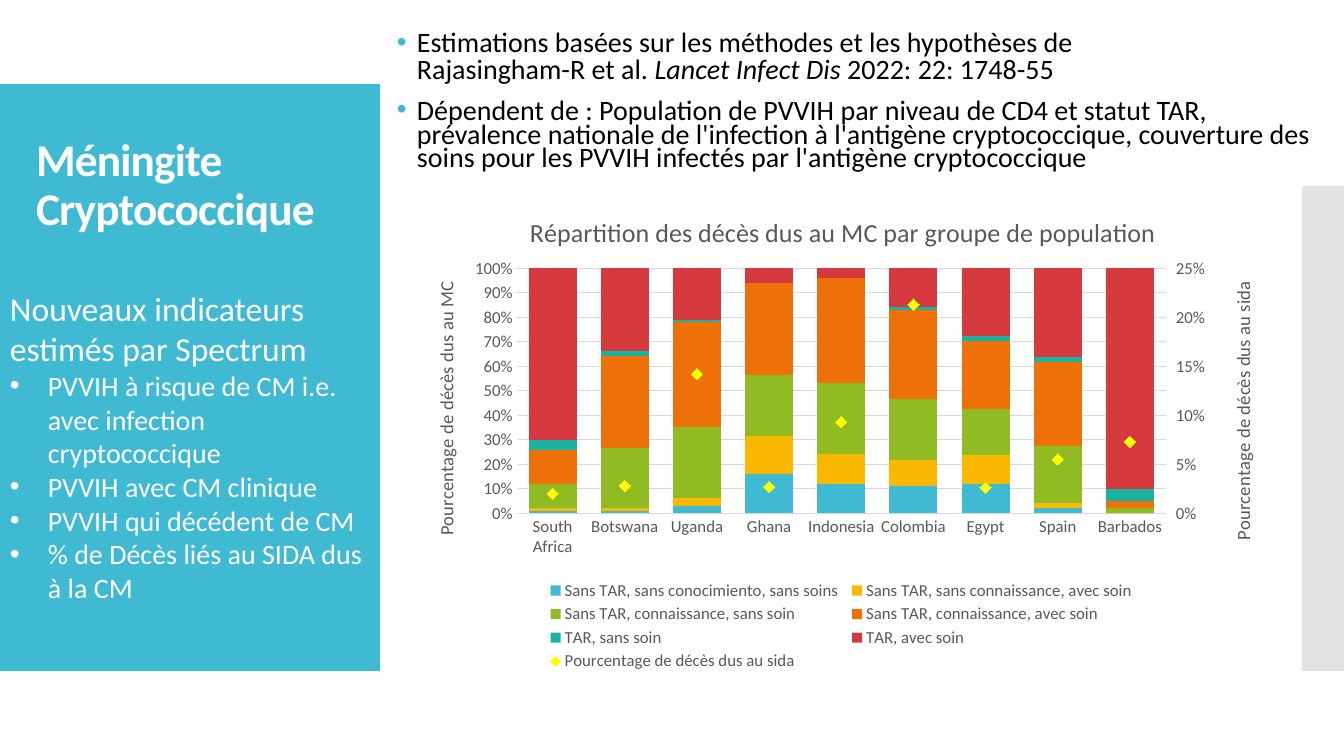
from copy import deepcopy

from lxml import etree
from pptx import Presentation
from pptx.chart.axis import ValueAxis
from pptx.chart.data import CategoryChartData
from pptx.dml.color import RGBColor
from pptx.enum.chart import XL_CHART_TYPE, XL_LEGEND_POSITION, XL_MARKER_STYLE, XL_TICK_MARK
from pptx.enum.shapes import MSO_SHAPE
from pptx.enum.text import MSO_ANCHOR, PP_ALIGN
from pptx.oxml import parse_xml
from pptx.oxml.ns import nsdecls, qn
from pptx.util import Pt

PX = 914400 / 100.8
FONT = "Calibri"
WHITE = RGBColor(0xFF, 0xFF, 0xFF)
BLACK = RGBColor(0, 0, 0)
TEAL = RGBColor(0x40, 0xBA, 0xD2)
PALE_GREY = RGBColor(0xC8, 0xC8, 0xC8)
GRID_GREY = RGBColor(0xD9, 0xD9, 0xD9)
TEXT_GREY = RGBColor(0x59, 0x59, 0x59)
YELLOW = RGBColor(0xFF, 0xFF, 0)
AMBER = RGBColor(0xFA, 0xB9, 0)
GREEN = RGBColor(0x90, 0xBB, 0x23)
ORANGE = RGBColor(0xEE, 0x70, 0x08)
SEA_GREEN = RGBColor(0x1A, 0xB3, 0x9F)
RED = RGBColor(0xD5, 0x39, 0x3D)

RECTANGLE = MSO_SHAPE.RECTANGLE
MIDDLE = MSO_ANCHOR.MIDDLE
LEFT = PP_ALIGN.LEFT
STACKED_100 = XL_CHART_TYPE.COLUMN_STACKED_100
LEGEND_BOTTOM = XL_LEGEND_POSITION.BOTTOM
DIAMOND = XL_MARKER_STYLE.DIAMOND
TICK_NONE = XL_TICK_MARK.NONE
TICK_OUTSIDE = XL_TICK_MARK.OUTSIDE

COUNTRIES = ["South Africa", "Botswana", "Uganda", "Ghana", "Indonesia",
             "Colombia", "Egypt", "Spain", "Barbados"]
DEATH_GROUPS = [
    ("Sans TAR, sans conocimiento, sans soins", TEAL, [1, 1, 3, 16, 12, 11, 12, 2, 0]),
    ("Sans TAR, sans connaissance, avec soin", AMBER, [1, 1, 3, 16, 12, 11, 12, 2, 0]),
    ("Sans TAR, connaissance, sans soin", GREEN, [10, 25, 29, 25, 29, 25, 19, 23, 2]),
    ("Sans TAR, connaissance, avec soin", ORANGE, [14, 38, 43, 38, 43, 37, 28, 34, 3]),
    ("TAR, sans soin", SEA_GREEN, [4, 2, 1, 0, 0, 1, 2, 2, 5]),
    ("TAR, avec soin", RED, [71, 34, 21, 6, 4, 16, 28, 36, 91]),
]
AIDS_SHARE = [0.02, 0.028, 0.142, 0.027, 0.093, 0.213, 0.026, 0.055, 0.073]
INDICATORS = [
    "PVVIH à risque de CM i.e. avec infection cryptococcique",
    "PVVIH avec CM clinique",
    "PVVIH qui décédent de CM",
    "% de Décès liés au SIDA dus à la CM",
]


def emu(*lengths):
    return [round(length * PX) for length in lengths]


def add_panel(slide, box, color):
    panel = slide.shapes.add_shape(RECTANGLE, *emu(*box))
    panel.shadow.inherit = False
    panel.fill.solid()
    panel.fill.fore_color.rgb = color
    panel.line.fill.background()
    return panel


def set_font(font, size, color, bold=False):
    font.name = FONT
    font.size = Pt(size)
    font.color.rgb = color
    font.bold = bold


def add_run(paragraph, text, size, color, bold=False, italic=False):
    run = paragraph.add_run()
    run.text = text
    set_font(run.font, size, color, bold)
    run.font.italic = italic
    return run


def add_bullet(paragraph, indent, color):
    properties = paragraph._p.get_or_add_pPr()
    properties.set("marL", str(emu(indent)[0]))
    properties.set("indent", str(emu(-indent)[0]))
    bullet_color = etree.SubElement(properties, qn("a:buClr"))
    etree.SubElement(bullet_color, qn("a:srgbClr")).set("val", str(color))
    etree.SubElement(properties, qn("a:buFont")).set("typeface", "Arial")
    etree.SubElement(properties, qn("a:buChar")).set("char", "•")


def add_side_panel(slide, box):
    left, top, width, height = box
    panel = add_panel(slide, box, TEAL)
    title = slide.shapes.title
    panel._element.addnext(title._element)
    title.left, title.top, title.width, title.height = emu(left + 26, top + 30, 325, 145)
    frame = title.text_frame
    frame.word_wrap = True
    frame.vertical_anchor = MIDDLE
    paragraph = frame.paragraphs[0]
    paragraph.alignment = LEFT
    paragraph.line_spacing = 0.9
    run = add_run(paragraph, "Méningite Cryptococcique", 32.4, WHITE, bold=True)
    run._r.get_or_add_rPr().set("spc", "-60")

    frame = slide.shapes.add_textbox(*emu(left, top + 199, width + 7, 329)).text_frame
    frame.word_wrap = True
    add_run(frame.paragraphs[0], "Nouveaux indicateurs estimés par Spectrum", 24, WHITE)
    for indicator in INDICATORS:
        paragraph = frame.add_paragraph()
        add_bullet(paragraph, 38, WHITE)
        add_run(paragraph, indicator, 20, WHITE)


def add_right_band(slide, box):
    band = add_panel(slide, box, PALE_GREY)
    color = band._element.spPr.find(".//" + qn("a:srgbClr"))
    etree.SubElement(color, qn("a:alpha")).set("val", "50000")


def add_method_notes(slide, box):
    frame = add_panel(slide, box, WHITE).text_frame
    frame.word_wrap = True
    frame.vertical_anchor = MIDDLE
    source, factors = frame.paragraphs[0], frame.add_paragraph()
    for paragraph, spacing in ((source, 0.8), (factors, 0.7)):
        add_bullet(paragraph, 20, TEAL)
        paragraph.alignment = LEFT
        paragraph.line_spacing = spacing
    factors.space_before = Pt(12)
    add_run(source, "Estimations basées sur les méthodes et les hypothèses de", 20, BLACK)
    source.add_line_break()
    add_run(source, "Rajasingham-R et al. ", 20, BLACK)
    add_run(source, "Lancet Infect Dis ", 20, BLACK, italic=True)
    add_run(source, "2022: 22: 1748-55", 20, BLACK)
    add_run(factors, "Dépendent de : Population de PVVIH par niveau de CD4 et statut TAR, "
            "prévalence nationale de l'infection à l'antigène cryptococcique, couverture des "
            "soins pour les PVVIH infectés par l'antigène cryptococcique", 20, BLACK)


def set_layout(element, position, **places):
    for old_layout in element.findall(qn("c:layout")):
        element.remove(old_layout)
    inner = element.tag == qn("c:plotArea")
    target = '<c:layoutTarget val="inner"/>' if inner else ""
    modes = "".join(f'<c:{key}Mode val="edge"/>' for key in "xy")
    values = "".join(f'<c:{key} val="{value}"/>' for key, value in places.items())
    element.insert(position, parse_xml(
        f'<c:layout {nsdecls("c")}><c:manualLayout>{target}{modes}{values}'
        "</c:manualLayout></c:layout>"))


def write_axis_title(axis, text, x):
    frame = axis.axis_title.text_frame
    frame.clear()
    add_run(frame.paragraphs[0], text, 13.3, TEXT_GREY)
    body = frame._txBody.find(qn("a:bodyPr"))
    body.set("rot", "-5400000")
    body.set("vert", "horz")
    set_layout(axis.axis_title._element, 1, x=x, y=0.19)


def move_to_right_axis(chart):
    plot_area = chart.element.find(".//" + qn("c:plotArea"))
    bars = plot_area.find(qn("c:barChart"))
    share = bars.findall(qn("c:ser"))[-1]
    for flag in share.findall(qn("c:invertIfNegative")):
        share.remove(flag)
    line_chart = parse_xml(
        f'<c:lineChart {nsdecls("c")}><c:grouping val="standard"/><c:varyColors val="0"/>'
        '<c:marker val="1"/><c:axId val="5001"/><c:axId val="5002"/></c:lineChart>')
    line_chart.insert(2, share)
    bars.addnext(line_chart)
    axes = {}
    for tag, own, other in (("c:catAx", "5001", "5002"), ("c:valAx", "5002", "5001")):
        axis = deepcopy(plot_area.find(qn(tag)))
        axis.find(qn("c:axId")).set("val", own)
        axis.find(qn("c:crossAx")).set("val", other)
        axes[tag] = axis
        plot_area.findall(qn("c:valAx"))[-1].addnext(axis)
    axes["c:catAx"].find(qn("c:delete")).set("val", "1")
    axes["c:valAx"].find(qn("c:axPos")).set("val", "r")
    axes["c:valAx"].find(qn("c:crosses")).set("val", "max")
    return ValueAxis(axes["c:valAx"])


def add_deaths_chart(slide, box):
    data = CategoryChartData()
    data.categories = COUNTRIES
    for name, _, values in DEATH_GROUPS:
        data.add_series(name, values)
    data.add_series("Pourcentage de décès dus au sida", AIDS_SHARE, "0.0%")
    chart = slide.shapes.add_chart(STACKED_100, *emu(*box), data).chart
    set_font(chart.font, 12, TEXT_GREY)
    chart.has_title = True
    add_run(chart.chart_title.text_frame.paragraphs[0],
            "Répartition des décès dus au MC par groupe de population", 18.6, TEXT_GREY)
    set_layout(chart.chart_title._element, 1, x=0.14, y=0.05)

    bars = chart.plots[0]
    bars.gap_width, bars.overlap, bars.vary_by_categories = 50, 100, False
    for series, (_, color, _) in zip(bars.series, DEATH_GROUPS):
        series.format.fill.solid()
        series.format.fill.fore_color.rgb = color

    category_axis, value_axis = chart.category_axis, chart.value_axis
    for axis in (category_axis, value_axis):
        axis.major_tick_mark = axis.minor_tick_mark = TICK_NONE
        set_font(axis.tick_labels.font, 12, TEXT_GREY)
    value_axis.format.line.fill.background()
    for line in (category_axis.format.line, value_axis.major_gridlines.format.line):
        line.color.rgb = GRID_GREY
        line.width = Pt(0.75)
    value_axis.tick_labels.number_format = "0%"
    value_axis.tick_labels.number_format_is_linked = False
    write_axis_title(value_axis, "Pourcentage de décès dus au MC", 0.03)

    right_axis = move_to_right_axis(chart)
    right_axis.has_major_gridlines = False
    right_axis.major_tick_mark = TICK_OUTSIDE
    right_axis.minimum_scale, right_axis.maximum_scale, right_axis.major_unit = 0, 0.25, 0.05
    write_axis_title(right_axis, "Pourcentage de décès dus au sida", 0.95)
    share = chart.plots[1].series[0]
    share.smooth = False
    share.format.line.fill.background()
    share.marker.style, share.marker.size = DIAMOND, 8
    share.marker.format.fill.solid()
    share.marker.format.fill.fore_color.rgb = YELLOW
    share.marker.format.line.fill.background()

    chart.has_legend = True
    chart.legend.position = LEGEND_BOTTOM
    chart.legend.include_in_layout = False
    set_font(chart.legend.font, 12, TEXT_GREY)
    set_layout(chart.legend._element, 1, x=0.16, y=0.8, w=0.69, h=0.2)
    set_layout(chart.element.find(".//" + qn("c:plotArea")), 0, x=0.13, y=0.17, w=0.75, h=0.5)


def main():
    presentation = Presentation()
    presentation.slide_width, presentation.slide_height = emu(1344, 756)
    slide = presentation.slides.add_slide(presentation.slide_layouts[5])
    add_side_panel(slide, (0, 84, 380, 587))
    add_right_band(slide, (1302, 84, 42, 587))
    add_method_notes(slide, (387, 18, 957, 168))
    add_deaths_chart(slide, (404, 185, 866, 490))
    presentation.save("out.pptx")


if __name__ == "__main__":
    main()
